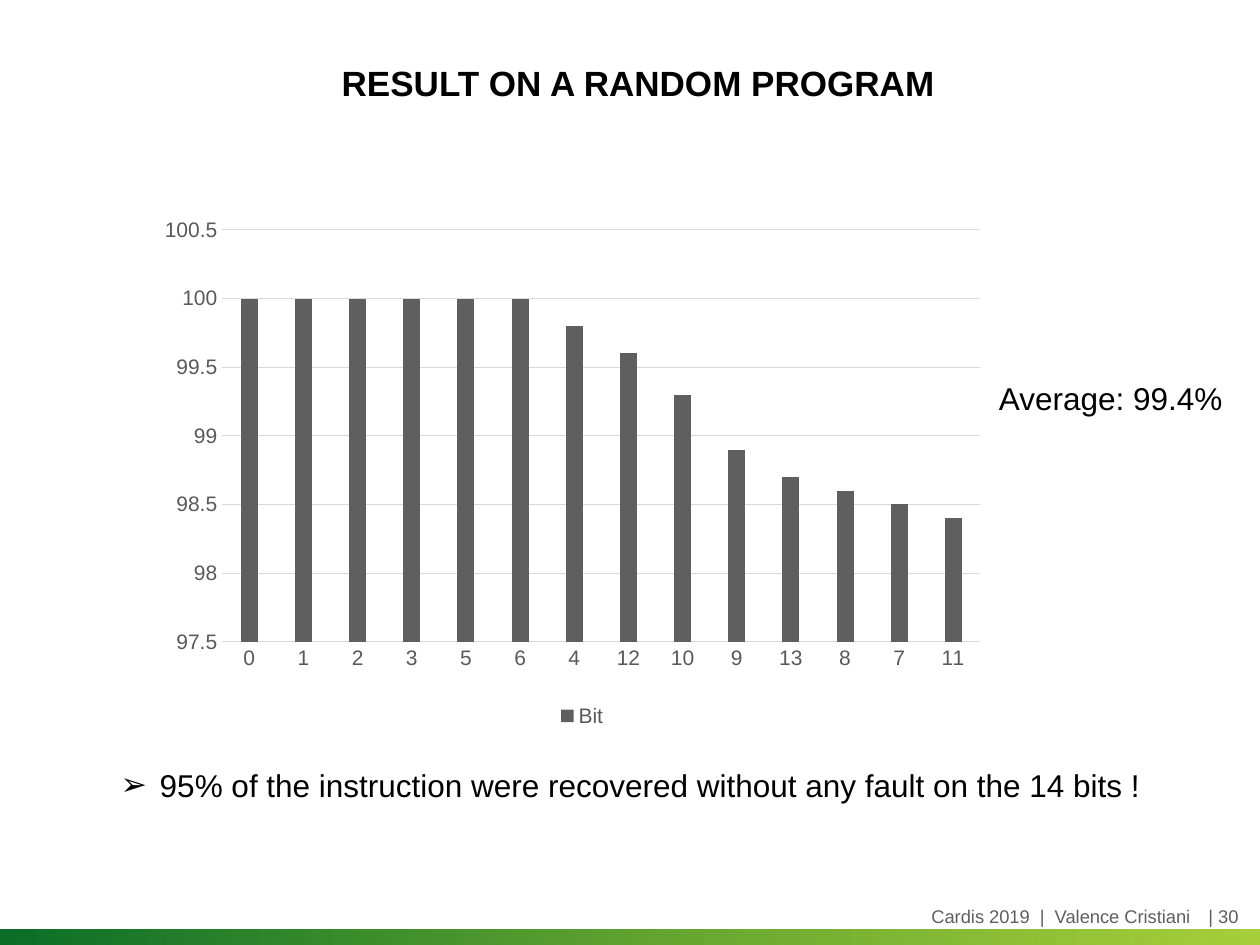
from lxml.etree import SubElement
from pptx import Presentation
from pptx.chart.data import CategoryChartData
from pptx.dml.color import RGBColor
from pptx.enum.chart import XL_CHART_TYPE as CT, XL_LEGEND_POSITION as LP, XL_TICK_MARK as TM
from pptx.enum.shapes import MSO_SHAPE as SH
from pptx.enum.text import MSO_ANCHOR as MA, PP_ALIGN as PA
from pptx.oxml import parse_xml
from pptx.oxml.ns import nsdecls, qn
from pptx.util import Inches, Pt

prs = Presentation()
prs.slide_width, prs.slide_height = Inches(10), Inches(7.5)
W, H = prs.slide_width, prs.slide_height
s = prs.slides.add_slide(prs.slide_layouts[6])


def style(font, size, color, bold=False):
    font.name, font.size, font.bold = "Arial", Pt(size), bold
    font.color.rgb = RGBColor.from_string(color)


def share(x, y, w, h):
    return int(x * W / 100), int(y * H / 100), int(w * W / 100), int(h * H / 100)


sp = s.shapes.add_shape(SH.RECTANGLE, *share(0, 98.4, 100, 1.6))
sp.shadow.inherit = False
sp.line.fill.background()
sp.fill.gradient()
sp.fill.gradient_angle = 0
for stop, color, pos in zip(sp.fill.gradient_stops, ("0A6E28", "91C30A"), (0, 1)):
    stop.color.rgb = RGBColor.from_string(color)
    stop.position = pos
end_color = list(sp._element.spPr.iter(qn("a:srgbClr")))[-1]
SubElement(end_color, qn("a:alpha"), val="80000")

texts = [
    ("| 30", (95.9, 95.73, 11.9, 2.4), 10.5, "5F5F5F", PA.LEFT, False),
    ("Cardis 2019  |  Valence Cristiani ", (0, 95.73, 94.9, 2.4), 10.5, "5F5F5F", PA.RIGHT, False),
    ("RESULT ON A RANDOM PROGRAM", (5.1, 2.8, 91.1, 11.87), 20, "000000", PA.CENTER, True),
]
for text, area, size, color, align, bold in texts:
    tf = s.shapes.add_textbox(*share(*area)).text_frame
    tf.margin_left = tf.margin_right = tf.margin_top = tf.margin_bottom = 0
    tf.word_wrap = True
    tf.vertical_anchor = MA.MIDDLE
    tf.text = text
    p = tf.paragraphs[0]
    p.alignment = align
    style(p.runs[0].font, size, color, bold)

data = CategoryChartData()
data.categories = ["0", "1", "2", "3", "5", "6", "4", "12", "10", "9", "13", "8", "7", "11"]
data.add_series("Bit", [100] * 6 + [99.8, 99.6, 99.3, 98.9, 98.7, 98.6, 98.5, 98.4])
chart = s.shapes.add_chart(CT.COLUMN_CLUSTERED, *share(12.2, 16.4, 68, 61.07), data).chart
style(chart.font, 10, "000000")
chart.has_title = False
chart.has_legend = True
chart.legend.position = LP.BOTTOM
chart.legend.include_in_layout = False
style(chart.legend.font, 12, "595959")

plot = chart.plots[0]
plot.gap_width, plot.overlap, plot.vary_by_categories = 219, -27, False
fill = plot.series[0].format.fill
fill.solid()
fill.fore_color.rgb = RGBColor.from_string("5F5F5F")

cat, val = chart.category_axis, chart.value_axis
for axis in (cat, val):
    axis.major_tick_mark = axis.minor_tick_mark = TM.NONE
    style(axis.tick_labels.font, 12, "595959")
val.minimum_scale, val.maximum_scale, val.major_unit = 97.5, 100.5, 0.5
val.tick_labels.number_format = "General"
val.tick_labels.number_format_is_linked = False
val.format.line.fill.background()
for line in (cat.format.line, val.major_gridlines.format.line):
    line.color.rgb = RGBColor.from_string("D9D9D9")
    line.width = Pt(0.75)

area = chart._chartSpace.chart.plotArea
for old in area.findall(qn("c:layout")):
    area.remove(old)
layout = parse_xml(f"<c:layout {nsdecls('c')}><c:manualLayout/></c:layout>")
for tag, value in (("layoutTarget", "inner"), ("xMode", "edge"), ("yMode", "edge"),
                   ("x", "0.08"), ("y", "0.13"), ("w", "0.885"), ("h", "0.714")):
    SubElement(layout[0], qn(f"c:{tag}"), val=value)
area.insert(0, layout)

notes = [
    ("95% of the instruction were recovered without any fault on the 14 bits !", (8.6, 80.4, 83.7, 5.33), True),
    ("Average: 99.4%", (78.3, 39.47, 20.6, 5.33), False),
]
for text, area, bulleted in notes:
    tf = s.shapes.add_textbox(*share(*area)).text_frame
    tf.word_wrap = False
    tf.text = text
    p = tf.paragraphs[0]
    p.alignment = PA.LEFT
    if bulleted:
        pPr = p._p.get_or_add_pPr()
        pPr.set("marL", str(Inches(0.31)))
        pPr.set("indent", str(-Inches(0.31)))
        SubElement(pPr, qn("a:buFont"), typeface="Arial")
        SubElement(pPr, qn("a:buChar"), char="➢")
    style(p.runs[0].font, 18, "000000")

prs.save("out.pptx")
